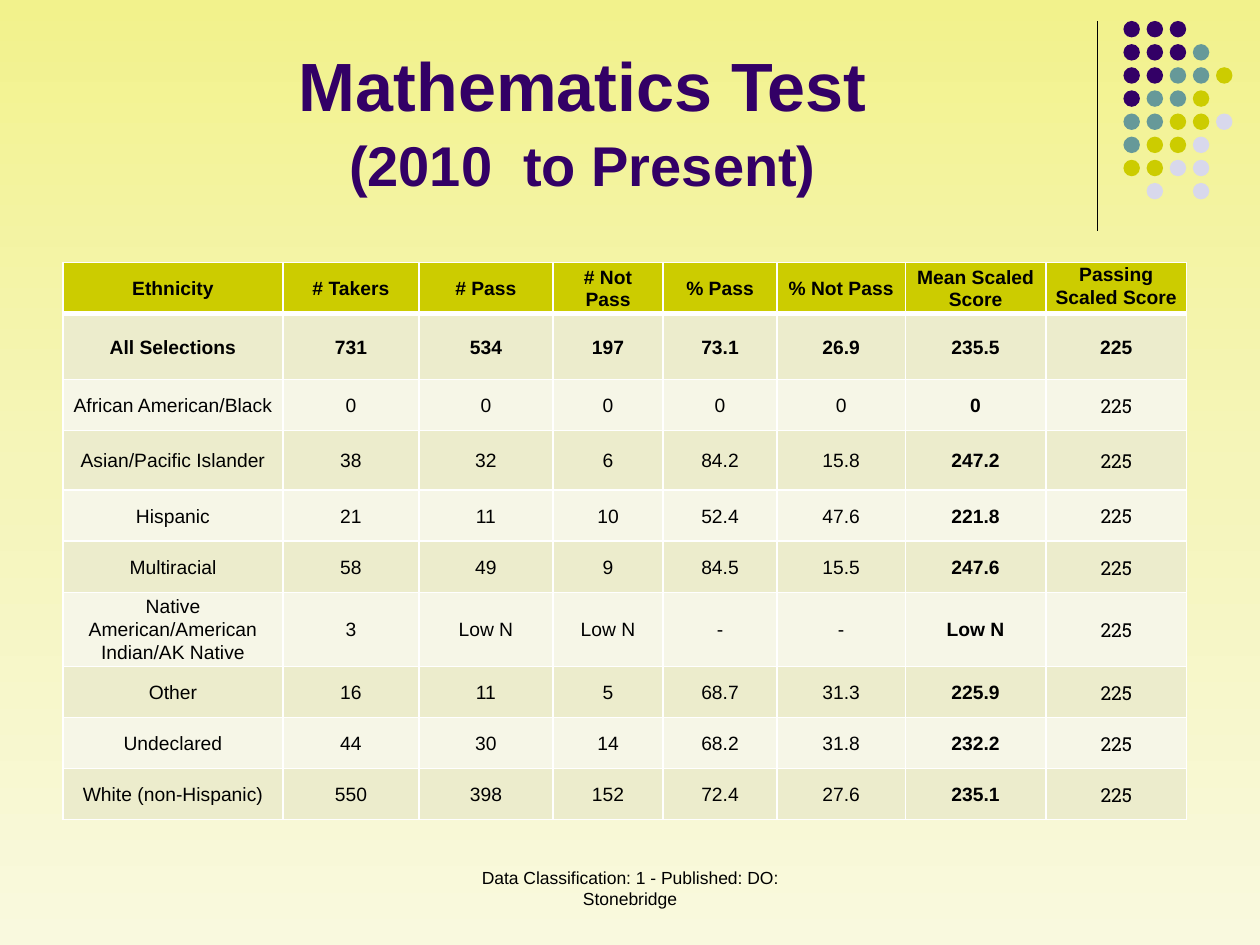
from copy import deepcopy

from lxml.etree import SubElement
from pptx import Presentation
from pptx.dml.color import RGBColor
from pptx.enum.shapes import MSO_CONNECTOR as Connector, MSO_SHAPE as Shape
from pptx.enum.text import MSO_ANCHOR as Anchor, PP_ALIGN as Align
from pptx.oxml import parse_xml
from pptx.oxml.ns import nsdecls, qn
from pptx.util import Pt

PURPLE = RGBColor(0x33, 0x00, 0x66)
TEAL = RGBColor(0x66, 0x99, 0x99)
OLIVE = RGBColor(0xCC, 0xCC, 0x00)
LILAC = RGBColor(0xD8, 0xD8, 0xEC)
BLACK = RGBColor(0x00, 0x00, 0x00)
WHITE = RGBColor(0xFF, 0xFF, 0xFF)
BAND_DARK = RGBColor(0xEC, 0xEC, 0xCC)
BAND_LIGHT = RGBColor(0xF6, 0xF6, 0xE7)
BACKDROP = [RGBColor(0xF2, 0xF2, 0x8C), RGBColor(0xF5, 0xF5, 0xBA), RGBColor(0xF9, 0xF9, 0xDE)]

DOT_COLORS = {"P": PURPLE, "T": TEAL, "O": OLIVE, "L": LILAC}
DOT_ROWS = ["PPP", "PPPT", "PPTTO", "PTTO", "TTOOL", "TOOL", "OOLL", ".L.L"]

COLUMN_WIDTHS = [125.7, 77.7, 76.6, 63, 65, 73.4, 80.3, 80.5]
ROW_HEIGHT = 29.2
TALL_ROWS = {1: 37.7, 3: 34, 6: 39.1}
PASSING_SCORE = "225"
HEADER = ["Ethnicity", "# Takers", "# Pass", "# Not Pass", "% Pass", "% Not Pass",
          "Mean Scaled Score", "Passing Scaled Score"]
RESULTS = [
    ["All Selections", "731", "534", "197", "73.1", "26.9", "235.5"],
    ["African American/Black", "0", "0", "0", "0", "0", "0"],
    ["Asian/Pacific Islander", "38", "32", "6", "84.2", "15.8", "247.2"],
    ["Hispanic", "21", "11", "10", "52.4", "47.6", "221.8"],
    ["Multiracial", "58", "49", "9", "84.5", "15.5", "247.6"],
    ["Native American/American Indian/AK Native", "3", "Low N", "Low N", "-", "-", "Low N"],
    ["Other", "16", "11", "5", "68.7", "31.3", "225.9"],
    ["Undeclared", "44", "30", "14", "68.2", "31.8", "232.2"],
    ["White (non-Hispanic)", "550", "398", "152", "72.4", "27.6", "235.1"],
]


def add_text(para, text, size=11, color=BLACK, bold=False, font="Arial", spacing=None):
    """Append one centred, formatted span to a paragraph."""
    para.alignment = Align.CENTER
    if spacing:
        para.line_spacing = spacing
    span = para.add_run()
    span.text = text
    span.font.name = font
    span.font.size = Pt(size)
    span.font.bold = bold
    span.font.color.rgb = color


def add_text_box(page, left, top, width, height, anchor=Anchor.TOP):
    box = page.shapes.add_textbox(Pt(left), Pt(top), Pt(width), Pt(height))
    box.text_frame.word_wrap = True
    box.text_frame.vertical_anchor = anchor
    return box.text_frame.paragraphs[0]


def paint_background(page):
    fill = page.background.fill
    fill.gradient()
    fill.gradient_angle = 270
    # A third stop goes in the middle
    stops = page.element.find(".//" + qn("a:gsLst"))
    middle = deepcopy(stops[0])
    middle.set("pos", "50000")
    stops.insert(1, middle)
    for stop, color in zip(fill.gradient_stops, BACKDROP):
        stop.color.rgb = color


def add_divider(page, x, top, bottom):
    line = page.shapes.add_connector(Connector.STRAIGHT, Pt(x), Pt(top), Pt(x), Pt(bottom))
    line.line.color.rgb = BLACK
    line.line.width = Pt(0.75)
    SubElement(line.element.spPr, qn("a:effectLst"))


def add_dots(page, left, top, pitch=13.22, size=9.4):
    group = page.shapes.add_group_shape()
    for row, letters in enumerate(DOT_ROWS):
        for column, letter in enumerate(letters):
            if letter not in DOT_COLORS:
                continue
            dot = group.shapes.add_shape(Shape.OVAL, Pt(left + column * pitch),
                                         Pt(top + row * pitch), Pt(size), Pt(size))
            dot.shadow.inherit = False
            dot.fill.solid()
            dot.fill.fore_color.rgb = DOT_COLORS[letter]
            dot.line.fill.background()


def add_title(page, left, top, width, height):
    para = add_text_box(page, left, top, width, height, Anchor.BOTTOM)
    add_text(para, "Mathematics Test", size=39, color=PURPLE, bold=True, spacing=1.07)
    para.add_line_break()
    add_text(para, "(2010  to Present)", size=32, color=PURPLE, bold=True, spacing=1.07)


def set_borders(cell, top=1, bottom=1):
    properties = cell._tc.get_or_add_tcPr()
    sides = {"lnL": 1, "lnR": 1, "lnT": top, "lnB": bottom}
    for index, (side, width) in enumerate(sides.items()):
        properties.insert(index, parse_xml(
            f'<a:{side} {nsdecls("a")} w="{Pt(width)}"><a:solidFill>'
            f'<a:srgbClr val="{WHITE}"/></a:solidFill></a:{side}>'))


def format_cell(cell, text, row, column):
    last = len(HEADER) - 1
    cell.margin_left = cell.margin_right = Pt(5)
    cell.margin_top = cell.margin_bottom = 0
    cell.vertical_anchor = Anchor.TOP if (row, column) == (0, last) else Anchor.MIDDLE
    set_borders(cell, top=3 if row == 1 else 1, bottom=3 if row == 0 else 1)
    cell.fill.solid()
    band = BAND_DARK if row % 2 else BAND_LIGHT
    cell.fill.fore_color.rgb = OLIVE if row == 0 else band
    add_text(cell.text_frame.paragraphs[0], text, spacing=1.07,
             bold=row < 2 or column == last - 1,
             font="Roboto Slab" if row > 1 and column == last else "Arial")


def add_results_table(page, left, top):
    rows = [HEADER] + [result + [PASSING_SCORE] for result in RESULTS]
    heights = [TALL_ROWS.get(row, ROW_HEIGHT) for row in range(len(rows))]
    table = page.shapes.add_table(len(rows), len(HEADER), Pt(left), Pt(top),
                                  Pt(sum(COLUMN_WIDTHS)), Pt(sum(heights))).table
    for column, width in zip(table.columns, COLUMN_WIDTHS):
        column.width = Pt(width)
    for row, texts in enumerate(rows):
        table.rows[row].height = Pt(heights[row])
        for column, text in enumerate(texts):
            format_cell(table.cell(row, column), text, row, column)


def add_footer(page, left, top, width, height):
    para = add_text_box(page, left, top, width, height)
    add_text(para, "Data Classification: 1 - Published: DO: Stonebridge", size=10)


def main():
    deck = Presentation()
    deck.slide_width, deck.slide_height = Pt(720), Pt(540)
    page = deck.slides.add_slide(deck.slide_layouts[6])
    paint_background(page)
    # Corner decoration
    add_divider(page, 627, 12, 132)
    add_dots(page, 642, 12)
    # Content
    add_title(page, 36, 30, 594, 86.4)
    add_results_table(page, 36, 150)
    add_footer(page, 246, 492, 228, 36)
    deck.save("out.pptx")


if __name__ == "__main__":
    main()
